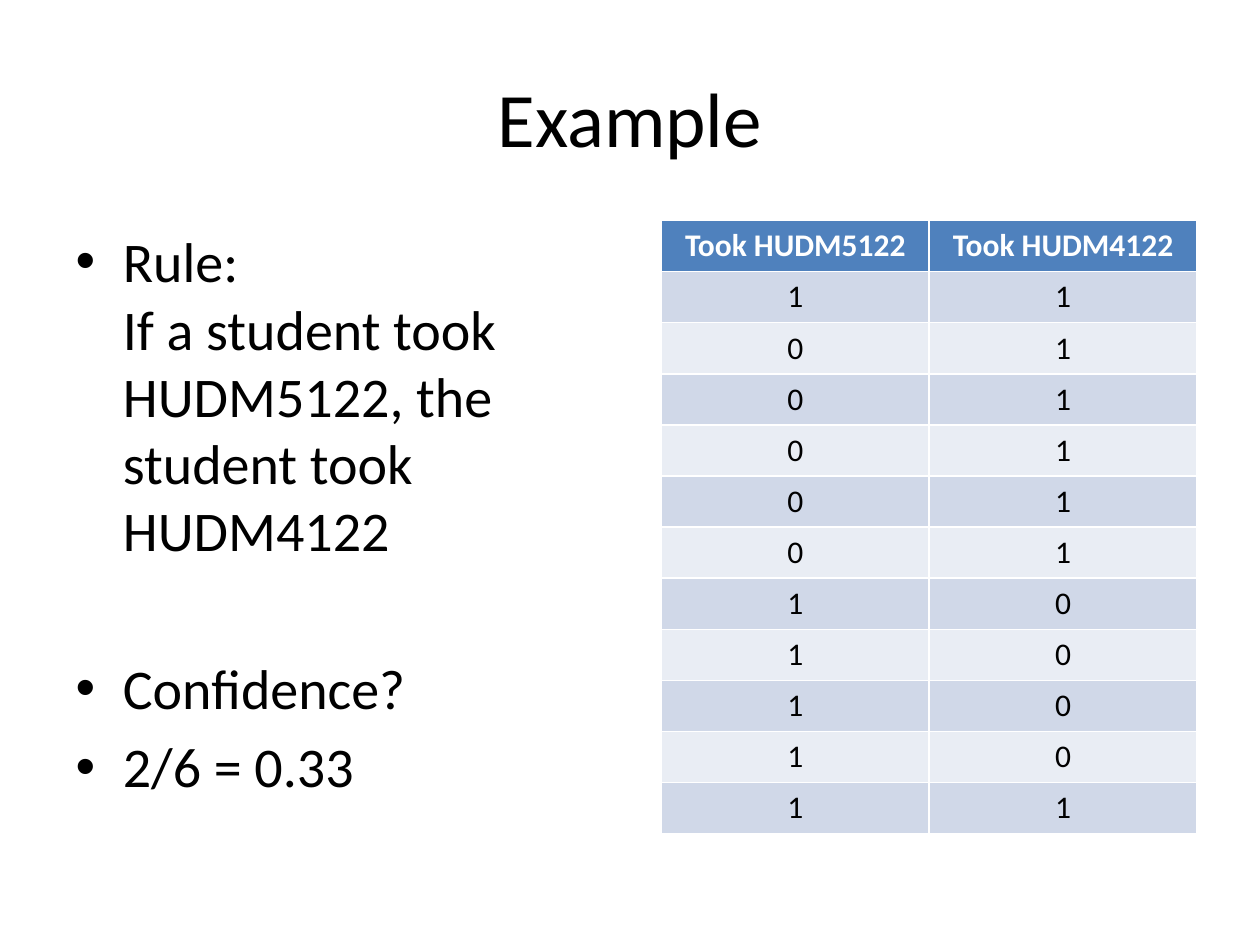
"""Build the slide that works out the confidence of a rule from a table of courses taken."""
from pptx import Presentation
from pptx.dml.color import RGBColor
from pptx.enum.text import MSO_ANCHOR, PP_ALIGN
from pptx.util import Inches, Pt

TITLE = "Example"
BULLETS = [
    ("Rule:\nIf a student took HUDM5122, the student took HUDM4122", 6.4),
    ("Confidence?", 51.8),
    ("2/6 = 0.33", 6.4),
]
HEADERS = ("Took HUDM5122", "Took HUDM4122")
RECORDS = [(1, 1)] + [(0, 1)] * 5 + [(1, 0)] * 4 + [(1, 1)]

FONT = "Calibri"
BLACK = RGBColor(0x00, 0x00, 0x00)
WHITE = RGBColor(0xFF, 0xFF, 0xFF)
HEADER_BLUE = RGBColor(0x4F, 0x81, 0xBD)
BANDS = (RGBColor(0xD0, 0xD8, 0xE8), RGBColor(0xE9, 0xED, 0xF4))

WIDTH, HEIGHT = Inches(10), Inches(7.5)
MARGIN = Inches(0.5)
CONTENT_TOP = Inches(1.75)
TABLE_WIDTH, TABLE_HEIGHT = Inches(4.25), Inches(4.87)


def place(shape, left, top, width, height):
    shape.left, shape.top, shape.width, shape.height = left, top, width, height


def format_runs(paragraph, size, color, bold=False):
    for run in paragraph.runs:
        run.font.name = FONT
        run.font.size = Pt(size)
        run.font.bold = bold
        run.font.color.rgb = color


def add_title(slide):
    title = slide.shapes.title
    place(title, MARGIN, Inches(0.3), WIDTH - 2 * MARGIN, Inches(1.25))
    title.text_frame.text = TITLE
    title.text_frame.vertical_anchor = MSO_ANCHOR.MIDDLE
    paragraph = title.text_frame.paragraphs[0]
    paragraph.alignment = PP_ALIGN.CENTER
    format_runs(paragraph, 44, BLACK)


def add_bullets(slide):
    body = slide.placeholders[1]
    place(body, MARGIN, CONTENT_TOP, Inches(4.33), Inches(4.95))
    frame = body.text_frame
    for index, (text, space_before) in enumerate(BULLETS):
        paragraph = frame.add_paragraph() if index else frame.paragraphs[0]
        paragraph.text = text
        paragraph.space_before = Pt(space_before)
        format_runs(paragraph, 32, BLACK)


def add_records(slide):
    rows = [HEADERS, *RECORDS]
    left = WIDTH - MARGIN - TABLE_WIDTH
    table = slide.shapes.add_table(
        len(rows), len(HEADERS), left, CONTENT_TOP, TABLE_WIDTH, TABLE_HEIGHT
    ).table
    for row_index, values in enumerate(rows):
        is_header = row_index == 0
        fill = HEADER_BLUE if is_header else BANDS[(row_index - 1) % 2]
        for column_index, value in enumerate(values):
            cell = table.cell(row_index, column_index)
            cell.fill.solid()
            cell.fill.fore_color.rgb = fill
            cell.text_frame.text = str(value)
            paragraph = cell.text_frame.paragraphs[0]
            paragraph.alignment = PP_ALIGN.CENTER
            format_runs(paragraph, 18, WHITE if is_header else BLACK, is_header)


def main():
    presentation = Presentation()
    presentation.slide_width, presentation.slide_height = WIDTH, HEIGHT
    slide = presentation.slides.add_slide(presentation.slide_layouts[1])
    add_title(slide)
    add_records(slide)
    add_bullets(slide)
    presentation.save("out.pptx")


if __name__ == "__main__":
    main()
